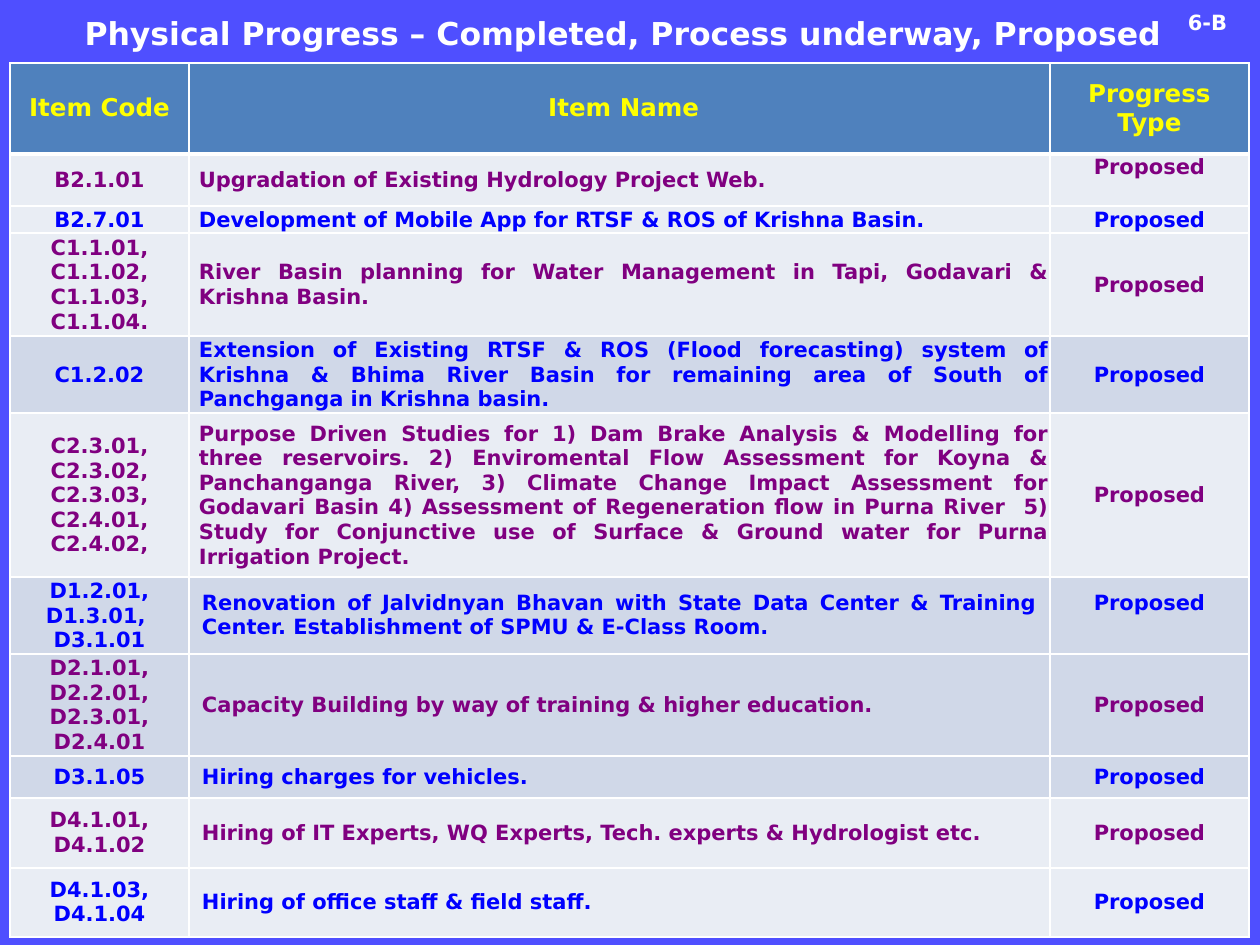
from dataclasses import dataclass

from lxml import etree
from pptx import Presentation, util as u
from pptx.dml.color import RGBColor
from pptx.enum import text
from pptx.oxml.ns import qn

PX = 914400 / 126


@dataclass(frozen=True)
class Theme:
    font: str = "DejaVu Sans"
    back: str = "4F4FFF"
    white: str = "FFFFFF"
    header_fill: str = "4F81BD"
    header_text: str = "FFFF00"
    light: str = "E9EDF4"
    dark: str = "D0D8E8"
    inks: tuple = ("800080", "0000FF")
    title_size: int = 18
    header_size: int = 14
    body_size: int = 12


T = Theme()
CENTER, JUSTIFY = text.PP_ALIGN.CENTER, text.PP_ALIGN.JUSTIFY
MIDDLE, TOP = text.MSO_ANCHOR.MIDDLE, text.MSO_ANCHOR.TOP

COLUMNS = (179, 861, 199)
HEADER = ("Item Code", " Item Name", "Progress Type")
HEADER_HEIGHT = 91
STATUS = "Proposed"

# Cell margins: left, top, right, bottom
WIDE = (13, 6, 13, 6)
TIGHT = (1, 1, 1, 0)
INDENTED = (10, 1, 1, 0)
RAISED = (13, 6, 13, 31)

# Height, fill, item code, item name, margins of the three cells
ITEMS = (
    (52, T.light, "B2.1.01", "Upgradation of Existing Hydrology Project Web.",
     (TIGHT, INDENTED, TIGHT)),
    (27, T.light, "B2.7.01",
     "Development of Mobile App for RTSF & ROS of Krishna Basin.",
     (TIGHT, INDENTED, TIGHT)),
    (103, T.light, "C1.1.01, C1.1.02, C1.1.03, C1.1.04.",
     "River Basin planning for Water Management in Tapi, Godavari & "
     "Krishna Basin.", (TIGHT, INDENTED, TIGHT)),
    (77, T.dark, "C1.2.02",
     "Extension of Existing RTSF & ROS (Flood forecasting) system of Krishna "
     "& Bhima River Basin for remaining area of South of Panchganga in "
     "Krishna basin.", (TIGHT, INDENTED, TIGHT)),
    (164, T.light, "C2.3.01, C2.3.02, C2.3.03, C2.4.01, C2.4.02,",
     "Purpose Driven Studies for 1) Dam Brake Analysis & Modelling for three "
     "reservoirs. 2) Enviromental Flow Assessment for Koyna & Panchanganga "
     "River, 3) Climate Change Impact Assessment for Godavari Basin "
     "4) Assessment of Regeneration flow in Purna River  5) Study for "
     "Conjunctive use of Surface & Ground water for Purna Irrigation Project.",
     (TIGHT, INDENTED, TIGHT)),
    (77, T.dark, "D1.2.01, D1.3.01, \nD3.1.01",
     "Renovation of Jalvidnyan Bhavan with State Data Center & Training "
     "Center. Establishment of SPMU & E-Class Room.", (TIGHT, WIDE, RAISED)),
    (102, T.dark, "D2.1.01, D2.2.01, D2.3.01, D2.4.01",
     "Capacity Building by way of training & higher education.",
     (TIGHT, WIDE, WIDE)),
    (42, T.dark, "D3.1.05", "Hiring charges for vehicles.",
     (TIGHT, WIDE, WIDE)),
    (70, T.light, "D4.1.01, D4.1.02",
     "Hiring of IT Experts, WQ Experts, Tech. experts & Hydrologist etc.",
     (WIDE, WIDE, WIDE)),
    (69, T.light, "D4.1.03, D4.1.04", "Hiring of office staff & field staff.",
     (WIDE, WIDE, WIDE)),
)


def px(n):
    return u.Emu(round(n * PX))


def rgb(color):
    return RGBColor.from_string(color)


def write(tf, words, size, color, align=CENTER):
    """Fill a text frame, one paragraph for each line of words."""
    tf.word_wrap = True
    form = {"name": T.font, "size": u.Pt(size), "bold": True}
    for i, line in enumerate(words.split("\n")):
        p = tf.add_paragraph() if i else tf.paragraphs[0]
        p.alignment = align
        r = p.add_run()
        r.text = line
        for key, value in form.items():
            setattr(r.font, key, value)
        r.font.color.rgb = rgb(color)


def add_label(s, box, words, size, anchor=TOP):
    tf = s.shapes.add_textbox(*map(px, box)).text_frame
    tf.vertical_anchor = anchor
    write(tf, words, size, T.white)


def add_borders(cell, top, bottom):
    """Draw white borders; top and bottom widths are in points."""
    tc_pr = cell._tc.get_or_add_tcPr()
    for side, width in (("L", 1), ("R", 1), ("T", top), ("B", bottom)):
        ln = etree.SubElement(tc_pr, qn(f"a:ln{side}"), w=str(u.Pt(width)))
        fill = etree.SubElement(ln, qn("a:solidFill"))
        etree.SubElement(fill, qn("a:srgbClr"), val=T.white)


def fill_cell(cell, words, size, color, fill, margins=WIDE, align=CENTER,
              anchor=MIDDLE, top=1, bottom=1):
    add_borders(cell, top, bottom)
    cell.fill.solid()
    cell.fill.fore_color.rgb = rgb(fill)
    cell.vertical_anchor = anchor
    for side, margin in zip(("left", "top", "right", "bottom"), margins):
        setattr(cell, f"margin_{side}", px(margin))
    write(cell.text_frame, words, size, color, align)


def add_progress_table(s, left, top):
    heights = [HEADER_HEIGHT] + [item[0] for item in ITEMS]
    box = (left, top, sum(COLUMNS), sum(heights))
    table = s.shapes.add_table(len(heights), len(COLUMNS),
                               *map(px, box)).table
    table.horz_banding = False
    for column, width in zip(table.columns, COLUMNS):
        column.width = px(width)
    for row, height in zip(table.rows, heights):
        row.height = px(height)
    for c, words in enumerate(HEADER):
        fill_cell(table.cell(0, c), words, T.header_size, T.header_text,
                  T.header_fill, bottom=3)
    for i, (_, fill, code, name, margins) in enumerate(ITEMS):
        first = i == 0
        for c, words in enumerate((code, name, STATUS)):
            fill_cell(table.cell(i + 1, c), words, T.body_size,
                      T.inks[i % 2], fill, margins[c],
                      align=JUSTIFY if c == 1 else CENTER,
                      anchor=TOP if first and c == 2 else MIDDLE,
                      top=3 if first else 1)


def main():
    prs = Presentation()
    prs.slide_width, prs.slide_height = px(1260), px(945)
    s = prs.slides.add_slide(prs.slide_layouts[6])
    s.background.fill.solid()
    s.background.fill.fore_color.rgb = rgb(T.back)
    add_label(s, (0, 11, 1257, 44),
              "Physical Progress – Completed, Process underway, Proposed ",
              T.title_size, MIDDLE)
    add_label(s, (1155, 3, 105, 38), "6-B", T.body_size)
    add_progress_table(s, 10, 63)
    prs.save("out.pptx")


if __name__ == "__main__":
    main()
